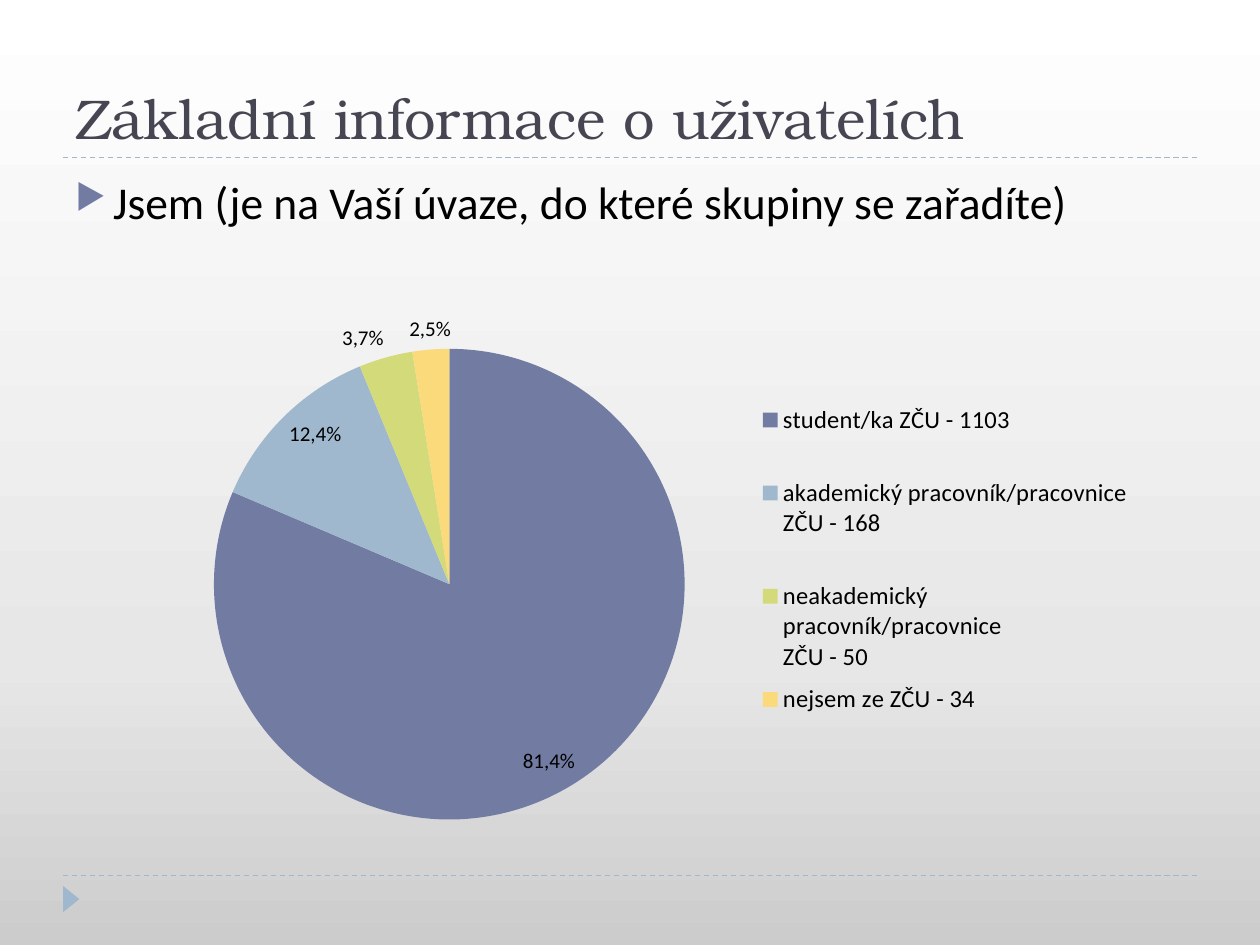
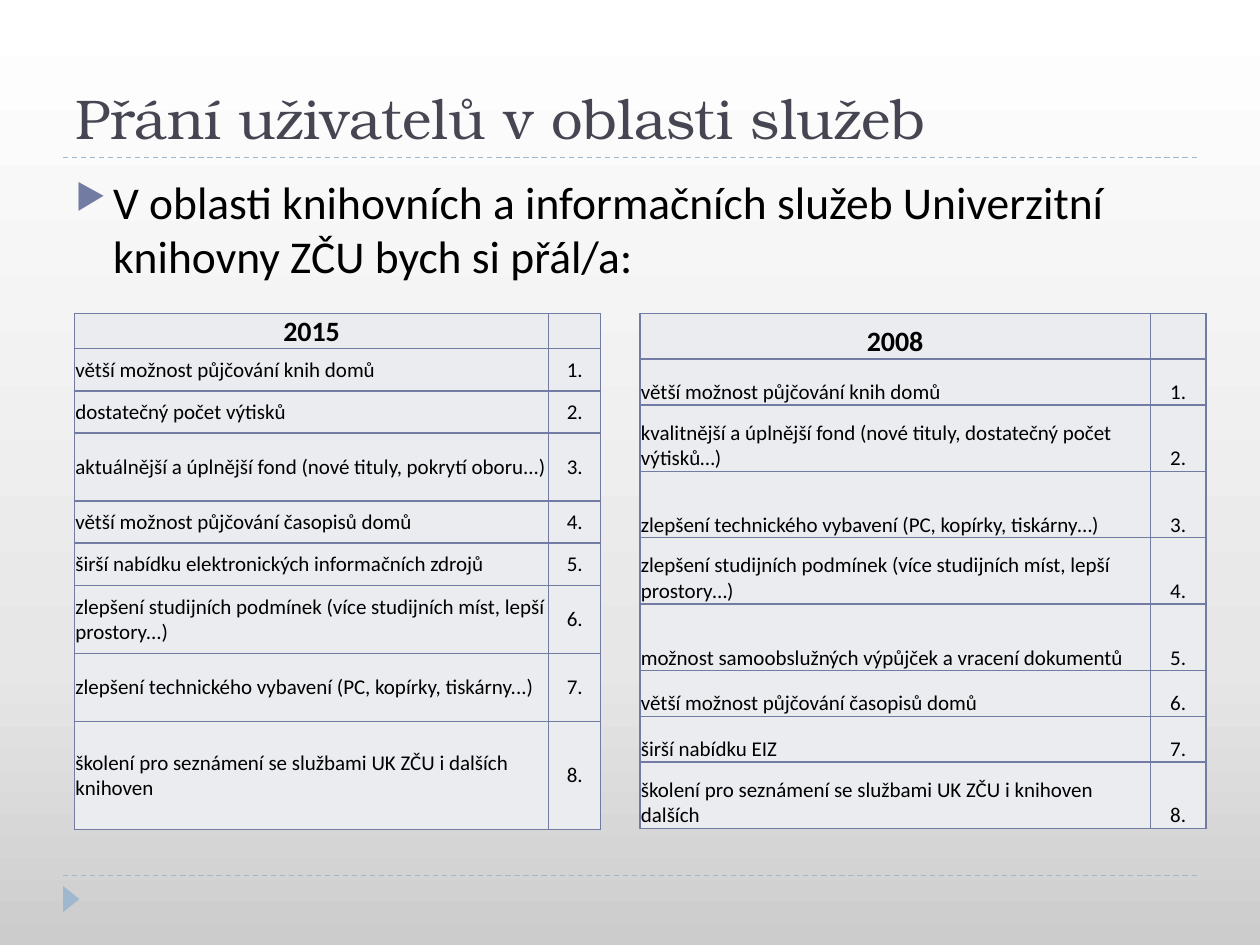
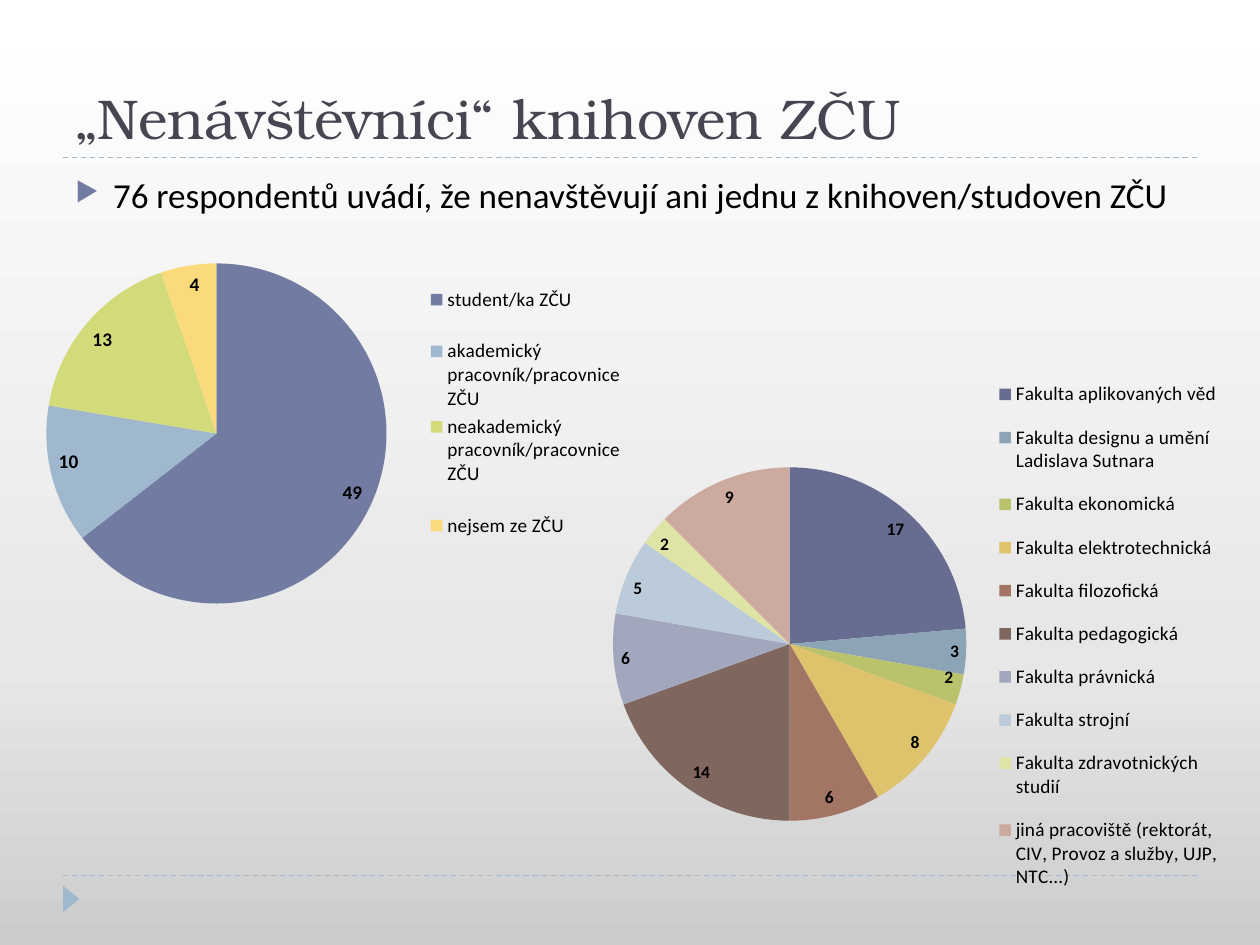
from copy import deepcopy

from pptx import Presentation
from pptx.chart.data import CategoryChartData
from pptx.dml.color import RGBColor
from pptx.enum.chart import XL_CHART_TYPE as ChartType, XL_LABEL_POSITION as LabelPos, XL_LEGEND_POSITION as LegendPos
from pptx.enum.dml import MSO_LINE_DASH_STYLE as Dash
from pptx.enum.shapes import MSO_CONNECTOR as Connector, MSO_SHAPE as Shape
from pptx.enum.text import MSO_ANCHOR as Anchor, PP_ALIGN as Align
from pptx.oxml import parse_xml
from pptx.oxml.ns import nsdecls, qn
from pptx.oxml.xmlchemy import OxmlElement
from pptx.util import Cm, Pt

TITLE_FONT = "TeX Gyre Bonum"
BODY_FONT = "Calibri"
BLACK = RGBColor(0x00, 0x00, 0x00)
TITLE_GREY = RGBColor(0x46, 0x46, 0x53)
VIOLET = RGBColor(0x72, 0x7C, 0xA3)
BLUE = RGBColor(0x9F, 0xB8, 0xCD)
GREEN = RGBColor(0xD2, 0xDA, 0x7A)
YELLOW = RGBColor(0xFA, 0xDA, 0x7A)
CELL_FILL = RGBColor(0xEB, 0xEC, 0xF0)
BACKGROUND = [
    (0, RGBColor(0xCC, 0xCC, 0xCC)),
    (0.3, RGBColor(0xE7, 0xE7, 0xE7)),
    (1, RGBColor(0xFF, 0xFF, 0xFF)),
]
GROUP_COLORS = [VIOLET, BLUE, GREEN, YELLOW]
FACULTY_COLORS = [
    RGBColor(0x66, 0x6D, 0x91), RGBColor(0x8D, 0xA3, 0xB6), RGBColor(0xBA, 0xC2, 0x6C),
    RGBColor(0xDE, 0xC2, 0x6C), RGBColor(0xA3, 0x75, 0x65), RGBColor(0x7F, 0x66, 0x5E),
    RGBColor(0xA2, 0xA7, 0xBE), RGBColor(0xBB, 0xCB, 0xDA), RGBColor(0xDF, 0xE4, 0xA6),
    RGBColor(0xCD, 0xAA, 0x9F),
]

USERS = [
    ("student/ka ZČU - 1103", 1103),
    ("akademický pracovník/pracovnice ZČU - 168", 168),
    ("neakademický pracovník/pracovnice ZČU - 50", 50),
    ("nejsem ze ZČU - 34", 34),
]
USER_LABELS = [
    ("81,4%", LabelPos.INSIDE_END),
    ("12,4%", LabelPos.INSIDE_END),
    ("3,7%", LabelPos.OUTSIDE_END),
    ("2,5%", LabelPos.OUTSIDE_END),
]
NON_VISITORS = [
    ("student/ka ZČU", 49),
    ("akademický pracovník/pracovnice ZČU", 10),
    ("neakademický pracovník/pracovnice ZČU", 13),
    ("nejsem ze ZČU", 4),
]
FACULTIES = [
    ("Fakulta aplikovaných věd", 17),
    ("Fakulta designu a umění Ladislava Sutnara", 3),
    ("Fakulta ekonomická", 2),
    ("Fakulta elektrotechnická", 8),
    ("Fakulta filozofická", 6),
    ("Fakulta pedagogická", 14),
    ("Fakulta právnická", 6),
    ("Fakulta strojní", 5),
    ("Fakulta zdravotnických studií", 2),
    ("jiná pracoviště (rektorát, CIV, Provoz a služby, UJP, NTC...)", 9),
]
WISHES_2015 = [
    "větší možnost půjčování knih domů",
    "dostatečný počet výtisků",
    "aktuálnější a úplnější fond (nové tituly, pokrytí oboru...)",
    "větší možnost půjčování časopisů domů",
    "širší nabídku elektronických informačních zdrojů",
    "zlepšení studijních podmínek (více studijních míst, lepší prostory...)",
    "zlepšení technického vybavení (PC, kopírky, tiskárny...)",
    "školení pro seznámení se službami UK ZČU i dalších knihoven",
]
WISHES_2008 = [
    "větší možnost půjčování knih domů",
    "kvalitnější a úplnější fond (nové tituly, dostatečný počet výtisků…)",
    "zlepšení technického vybavení (PC, kopírky, tiskárny…)",
    "zlepšení studijních podmínek (více studijních míst, lepší prostory…)",
    "možnost samoobslužných výpůjček a vracení dokumentů",
    "větší možnost půjčování časopisů domů",
    "širší nabídku EIZ",
    "školení pro seznámení se službami UK ZČU i knihoven dalších",
]
ROWS_2015 = [0.71, 0.85, 0.85, 1.37, 0.85, 0.85, 1.37, 1.37, 2.18]
ROWS_2008 = [0.92, 0.92, 1.34, 1.34, 1.34, 1.34, 0.92, 0.92, 1.34]


def style_font(font, size, color=BLACK, name=BODY_FONT, bold=False):
    """Set the size, colour, typeface and weight of a font."""
    font.size, font.name, font.bold = Pt(size), name, bold
    font.color.rgb = color


def add_background(slide):
    """Fill the slide background with the grey gradient rising to white."""
    fill = slide.background.fill
    fill.gradient()
    fill.gradient_angle = 90
    gs_list = slide.element.find(".//" + qn("a:gsLst"))
    gs_list.append(deepcopy(gs_list[0]))
    for stop, (position, color) in zip(fill.gradient_stops, BACKGROUND):
        stop.position = position
        stop.color.rgb = color


def add_rule(slide, y):
    """Draw a dashed rule across the slide."""
    line = slide.shapes.add_connector(Connector.STRAIGHT, Cm(1.27), Cm(y), Cm(24.13), Cm(y))
    line.line.color.rgb = BLUE
    line.line.width = Pt(0.75)
    line.line.dash_style = Dash.DASH
    line._element.spPr.append(OxmlElement("a:effectLst"))


def add_footer_arrow(slide):
    """Draw the small triangle pointing right below the footer rule."""
    sp = slide.shapes.add_shape(Shape.ISOSCELES_TRIANGLE, Cm(1.17), Cm(17.96), Cm(0.53), Cm(0.33))
    sp.rotation = 90
    sp.shadow.inherit = False
    sp.fill.solid()
    sp.fill.fore_color.rgb = BLUE
    sp.line.fill.background()


def add_text(slide, text, box, anchor):
    """Add a wrapping text box and return its paragraph."""
    tf = slide.shapes.add_textbox(*map(Cm, box)).text_frame
    tf.word_wrap = True
    tf.vertical_anchor = anchor
    tf.text = text
    return tf.paragraphs[0]


def add_title(slide, text):
    """Add the slide title standing on the upper rule."""
    p = add_text(slide, text, (1.27, 0.43, 22.86, 2.74), Anchor.BOTTOM)
    style_font(p.runs[0].font, 32, TITLE_GREY, TITLE_FONT)


def add_bullet(slide, text, size, width=22.86, height=13.72):
    """Add the bulleted statement below the title."""
    p = add_text(slide, text, (1.27, 3.38, width, height), Anchor.TOP)
    style_font(p.runs[0].font, size)
    p.space_before = Pt(6)
    pPr = p._p.get_or_add_pPr()
    pPr.set("marL", str(Cm(0.76)))
    pPr.set("indent", str(-Cm(0.76)))
    for xml in (
        f'<a:buClr {nsdecls("a")}><a:srgbClr val="{VIOLET}"/></a:buClr>',
        f'<a:buSzPct {nsdecls("a")} val="76000"/>',
        f'<a:buChar {nsdecls("a")} char="▶"/>',
    ):
        pPr.append(parse_xml(xml))


def add_slide(prs, title):
    """Add a blank slide with the shared background, rules and title."""
    slide = prs.slides.add_slide(prs.slide_layouts[6])
    add_background(slide)
    for y in (17.65, 3.18):
        add_rule(slide, y)
    add_footer_arrow(slide)
    add_title(slide, title)
    return slide


def manual_layout(box, inner=False):
    """Return a chart layout element for a box given in chart fractions."""
    target = '<c:layoutTarget val="inner"/>' if inner else ""
    modes = "".join(f'<c:{axis}Mode val="edge"/>' for axis in "xy")
    sizes = "".join(f'<c:{key} val="{value}"/>' for key, value in zip("xywh", box))
    return parse_xml(
        f'<c:layout {nsdecls("c")}><c:manualLayout>{target}{modes}{sizes}</c:manualLayout></c:layout>'
    )


def drop_layout(element):
    """Remove an existing layout from a chart element."""
    for layout in element.findall(qn("c:layout")):
        element.remove(layout)


def add_legend(chart, size, box):
    """Add a right-hand legend in the given box."""
    chart.has_legend = True
    legend = chart.legend
    legend.position = LegendPos.RIGHT
    legend.include_in_layout = False
    style_font(legend.font, size)
    drop_layout(legend._element)
    legend._element.find(qn("c:overlay")).addprevious(manual_layout(box))


def add_pie(slide, box, data, colors, plot_box, legend_box, legend_size, label_size):
    """Add a pie chart with bold value labels and return its series."""
    chart_data = CategoryChartData()
    chart_data.categories = [name for name, _ in data]
    chart_data.add_series("Series 1", [value for _, value in data])
    chart = slide.shapes.add_chart(ChartType.PIE, *map(Cm, box), chart_data).chart
    chart.has_title = False
    style_font(chart.font, 10)
    add_legend(chart, legend_size, legend_box)
    plot_area = chart._chartSpace.chart.plotArea
    drop_layout(plot_area)
    plot_area.insert(0, manual_layout(plot_box, inner=True))
    series = chart.plots[0].series[0]
    for index, color in enumerate(colors):
        fill = series.points[index].format.fill
        fill.solid()
        fill.fore_color.rgb = color
    labels = series.data_labels
    labels.show_value = True
    labels.position = LabelPos.INSIDE_END
    style_font(labels.font, label_size, bold=True)
    return series


def set_point_labels(series, labels, size):
    """Give each slice its own label text and position."""
    for index, (text, position) in enumerate(labels):
        label = series.points[index].data_label
        label.text_frame.text = text
        style_font(label.text_frame.paragraphs[0].runs[0].font, size)
        label.position = position


def add_borders(cell):
    """Draw a thin violet border on all sides of a cell."""
    tcPr = cell._tc.get_or_add_tcPr()
    for index, side in enumerate(("lnL", "lnR", "lnT", "lnB")):
        tcPr.insert(index, parse_xml(
            f'<a:{side} {nsdecls("a")} w="{Pt(1)}"><a:solidFill><a:srgbClr val="{VIOLET}"/></a:solidFill></a:{side}>'
        ))


def fill_cell(cell, text, size, anchor, align, bold):
    """Write and format one table cell."""
    cell.margin_left = cell.margin_right = cell.margin_top = Cm(0.02)
    cell.margin_bottom = 0
    cell.vertical_anchor = anchor
    cell.fill.solid()
    cell.fill.fore_color.rgb = CELL_FILL
    add_borders(cell)
    p = cell.text_frame.paragraphs[0]
    p.alignment = align
    if text:
        p.text = text
        style_font(p.runs[0].font, size, bold=bold)
    else:
        end = OxmlElement("a:endParaRPr")
        end.set("sz", str(size * 100))
        p._p.append(end)


def add_wishes(slide, left, year, wishes, widths, heights, anchor):
    """Add a ranked table of wishes for one year."""
    rows = [(year, "")] + [(wish, f"{rank}.") for rank, wish in enumerate(wishes, 1)]
    frame = slide.shapes.add_table(len(rows), 2, Cm(left), Cm(6.32), Cm(sum(widths)), Cm(sum(heights)))
    table = frame.table
    for column, width in zip(table.columns, widths):
        column.width = Cm(width)
    for i, (texts, height) in enumerate(zip(rows, heights)):
        table.rows[i].height = Cm(height)
        header = i == 0
        for j, text in enumerate(texts):
            fill_cell(
                table.cell(i, j), text,
                size=16 if header else 12,
                anchor=Anchor.BOTTOM if header else anchor,
                align=Align.CENTER if header or j else Align.LEFT,
                bold=header,
            )


def main():
    """Build the three survey slides."""
    prs = Presentation()
    prs.slide_width, prs.slide_height = Cm(25.4), Cm(19.05)

    slide = add_slide(prs, "Základní informace o uživatelích")
    add_bullet(slide, "Jsem (je na Vaší úvaze, do které skupiny se zařadíte)", 26)
    series = add_pie(
        slide, (2.9, 5.99, 20.19, 10.92), USERS, GROUP_COLORS,
        (0.07, 0.09, 0.47, 0.88), (0.61, 0.12, 0.38, 0.73), 14, 12,
    )
    set_point_labels(series, USER_LABELS, 12)

    slide = add_slide(prs, "Přání uživatelů v oblasti služeb")
    add_bullet(slide, "V oblasti knihovních a informačních služeb Univerzitní knihovny ZČU bych si přál/a:", 26)
    add_wishes(slide, 1.5, "2015", WISHES_2015, (9.56, 1.05), ROWS_2015, Anchor.MIDDLE)
    add_wishes(slide, 12.9, "2008", WISHES_2008, (10.29, 1.12), ROWS_2008, Anchor.BOTTOM)

    slide = add_slide(prs, "„Nenávštěvníci“ knihoven ZČU")
    add_bullet(slide, "76 respondentů uvádí, že nenavštěvují ani jednu z knihoven/studoven ZČU", 20, 23.24, 1.55)
    add_pie(
        slide, (11.1, 7.32, 13.97, 11), FACULTIES, FACULTY_COLORS,
        (0.09, 0.13, 0.51, 0.77), (0.63, 0, 0.35, 1), 11, 10,
    )
    add_pie(
        slide, (0.3, 4.93, 12.7, 7.62), NON_VISITORS, GROUP_COLORS,
        (0.05, 0.05, 0.54, 0.9), (0.65, 0.04, 0.34, 0.81), 11, 11,
    )

    prs.save("out.pptx")


if __name__ == "__main__":
    main()
